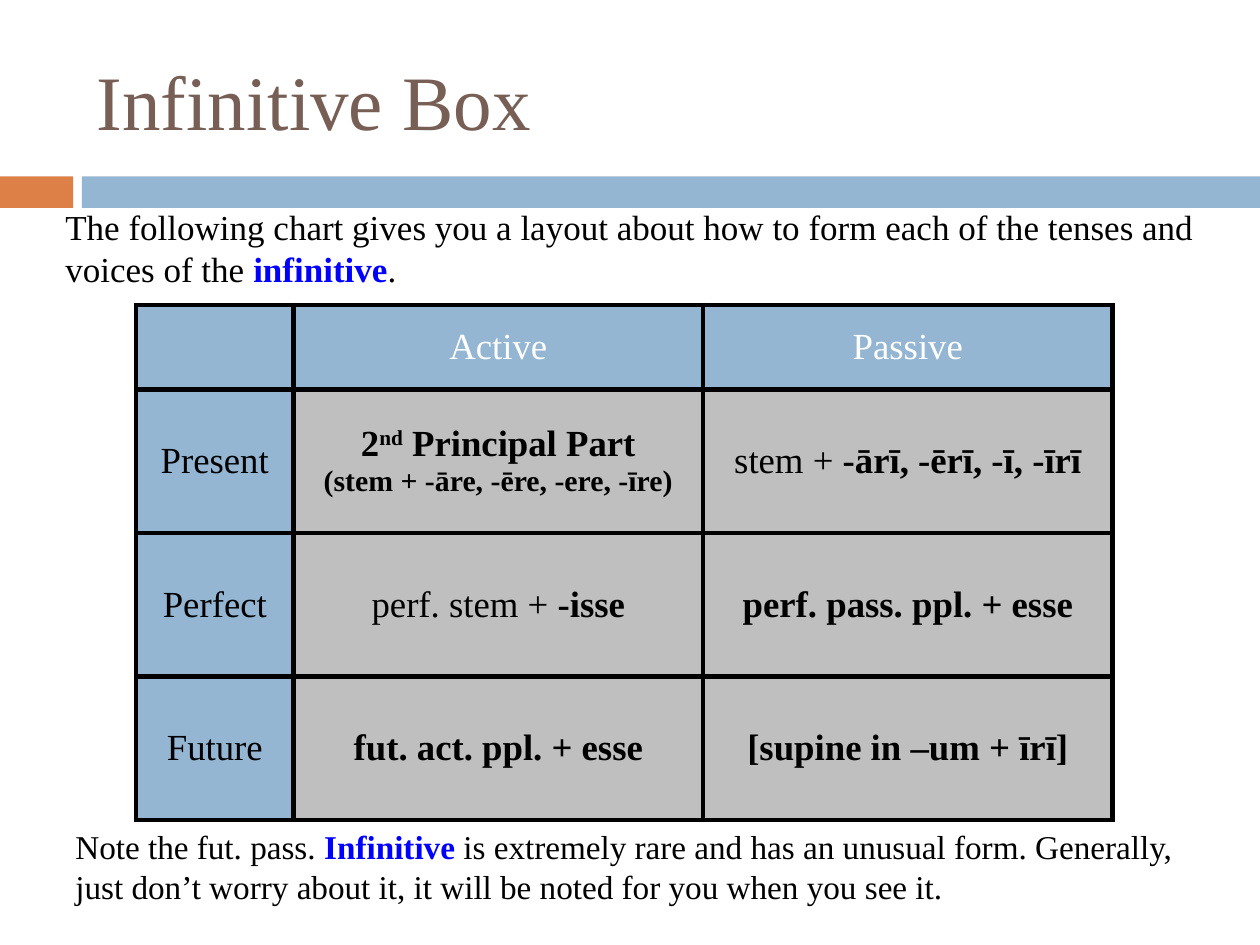
from dataclasses import dataclass

from lxml import etree
from pptx import Presentation
from pptx.dml.color import RGBColor
from pptx.enum.shapes import MSO_SHAPE
from pptx.enum.text import MSO_ANCHOR, PP_ALIGN
from pptx.oxml.ns import qn
from pptx.util import Inches, Pt

RECTANGLE = MSO_SHAPE.RECTANGLE
MIDDLE, TOP = MSO_ANCHOR.MIDDLE, MSO_ANCHOR.TOP
CENTER, LEFT = PP_ALIGN.CENTER, PP_ALIGN.LEFT
BLANK_LAYOUT = 6
PLAIN, BOLD, KEYWORD, SUPER = "plain", "bold", "keyword", "super"


@dataclass(frozen=True)
class Theme:
    """Colours, typeface, type sizes and rule width of the slide."""

    font: str = "Times New Roman"
    title: str = "775F55"
    accent: str = "DD8047"
    band: str = "94B6D2"
    body_fill: str = "BFBFBF"
    ink: str = "000000"
    header_ink: str = "FFFFFF"
    keyword: str = "0000FF"
    title_size: int = 44
    cell_size: int = 21
    detail_size: int = 17
    intro_size: int = 20
    note_size: int = 19
    border: int = 3


THEME = Theme()
COLUMN_WIDTHS = (1.25, 3.25, 3.25)
ROW_HEIGHTS = (0.67, 1.14, 1.14, 1.14)
CELL = THEME.cell_size

TABLE_ROWS = [
    [[], [(CELL, [("Active", PLAIN)])], [(CELL, [("Passive", PLAIN)])]],
    [
        [(CELL, [("Present", PLAIN)])],
        [
            (CELL, [("2", BOLD), ("nd", SUPER), (" Principal Part", BOLD)]),
            (THEME.detail_size, [("(stem + -āre, -ēre, -ere, -īre)", BOLD)]),
        ],
        [(CELL, [("stem + ", PLAIN), ("-ārī, -ērī, -ī, -īrī", BOLD)])],
    ],
    [
        [(CELL, [("Perfect", PLAIN)])],
        [(CELL, [("perf. stem + ", PLAIN), ("-isse", BOLD)])],
        [(CELL, [("perf. pass. ppl. + esse", BOLD)])],
    ],
    [
        [(CELL, [("Future", PLAIN)])],
        [(CELL, [("fut. act. ppl. + esse", BOLD)])],
        [(CELL, [("[supine in –um + īrī]", BOLD)])],
    ],
]

INTRO = [
    ("The following chart gives you a layout about how to form each of the "
     "tenses and voices of the ", PLAIN),
    ("infinitive", KEYWORD),
    (".", PLAIN),
]
NOTE = [
    ("Note the fut. pass. ", PLAIN),
    ("Infinitive", KEYWORD),
    (" is extremely rare and has an unusual form. Generally, just don’t worry "
     "about it, it will be noted for you when you see it.", PLAIN),
]


def rgb(value):
    """Turn a hex string into a colour."""
    return RGBColor.from_string(value)


def write_paragraphs(frame, paragraphs, color, align=LEFT):
    """Fill a text frame with paragraphs given as (size, spans)."""
    for index, (size, spans) in enumerate(paragraphs):
        para = frame.add_paragraph() if index else frame.paragraphs[0]
        para.alignment = align
        para.font.name = THEME.font
        para.font.size = Pt(size)
        for text, style in spans:
            span = para.add_run()
            span.text = text
            span.font.bold = style != PLAIN
            span.font.color.rgb = rgb(THEME.keyword if style == KEYWORD else color)
            if style == SUPER:
                span._r.get_or_add_rPr().set("baseline", "30000")


def add_band(page, left, width, color):
    """Draw one part of the strip under the title."""
    band = page.shapes.add_shape(
        RECTANGLE, Inches(left), Inches(1.4), Inches(width), Inches(0.25))
    band.shadow.inherit = False
    band.fill.solid()
    band.fill.fore_color.rgb = rgb(color)
    band.line.fill.background()


def add_text(page, frame_at, size, spans, color=THEME.ink, anchor=TOP):
    """Add a wrapping text box with one paragraph."""
    box = page.shapes.add_textbox(*map(Inches, frame_at))
    box.text_frame.word_wrap = True
    box.text_frame.vertical_anchor = anchor
    write_paragraphs(box.text_frame, [(size, spans)], color)


def add_borders(cell):
    """Rule all four sides of a cell, ahead of its fill."""
    properties = cell._tc.get_or_add_tcPr()
    for index, side in enumerate(("lnL", "lnR", "lnT", "lnB")):
        line = etree.Element(qn(f"a:{side}"), w=str(Pt(THEME.border)))
        fill = etree.SubElement(line, qn("a:solidFill"))
        etree.SubElement(fill, qn("a:srgbClr"), val=THEME.ink)
        properties.insert(index, line)


def add_infinitive_table(page):
    """Add the table of tenses and voices."""
    table = page.shapes.add_table(
        len(ROW_HEIGHTS), len(COLUMN_WIDTHS), Inches(1.08), Inches(2.42),
        Inches(sum(COLUMN_WIDTHS)), Inches(sum(ROW_HEIGHTS))).table
    table.first_row = table.horz_banding = False
    for column, width in zip(table.columns, COLUMN_WIDTHS):
        column.width = Inches(width)
    for row, height in zip(table.rows, ROW_HEIGHTS):
        row.height = Inches(height)
    for r, row in enumerate(TABLE_ROWS):
        for c, paragraphs in enumerate(row):
            cell = table.cell(r, c)
            is_label = r == 0 or c == 0
            cell.vertical_anchor = MIDDLE
            cell.fill.solid()
            cell.fill.fore_color.rgb = rgb(THEME.band if is_label else THEME.body_fill)
            add_borders(cell)
            color = THEME.ink if r else THEME.header_ink
            write_paragraphs(cell.text_frame, paragraphs, color, CENTER)


def main():
    """Build and save the slide."""
    deck = Presentation()
    deck.slide_width, deck.slide_height = Inches(10), Inches(7.5)
    page = deck.slides.add_slide(deck.slide_layouts[BLANK_LAYOUT])
    add_band(page, 0, 0.58, THEME.accent)
    add_band(page, 0.65, 9.35, THEME.band)
    add_text(page, (0.67, 0.25, 8.92, 1.08), THEME.title_size,
             [("Infinitive Box", PLAIN)], THEME.title, MIDDLE)
    add_infinitive_table(page)
    add_text(page, (0.42, 1.58, 9.25, 0.77), THEME.intro_size, INTRO)
    add_text(page, (0.5, 6.51, 9.08, 0.74), THEME.note_size, NOTE)
    deck.save("out.pptx")


if __name__ == "__main__":
    main()
